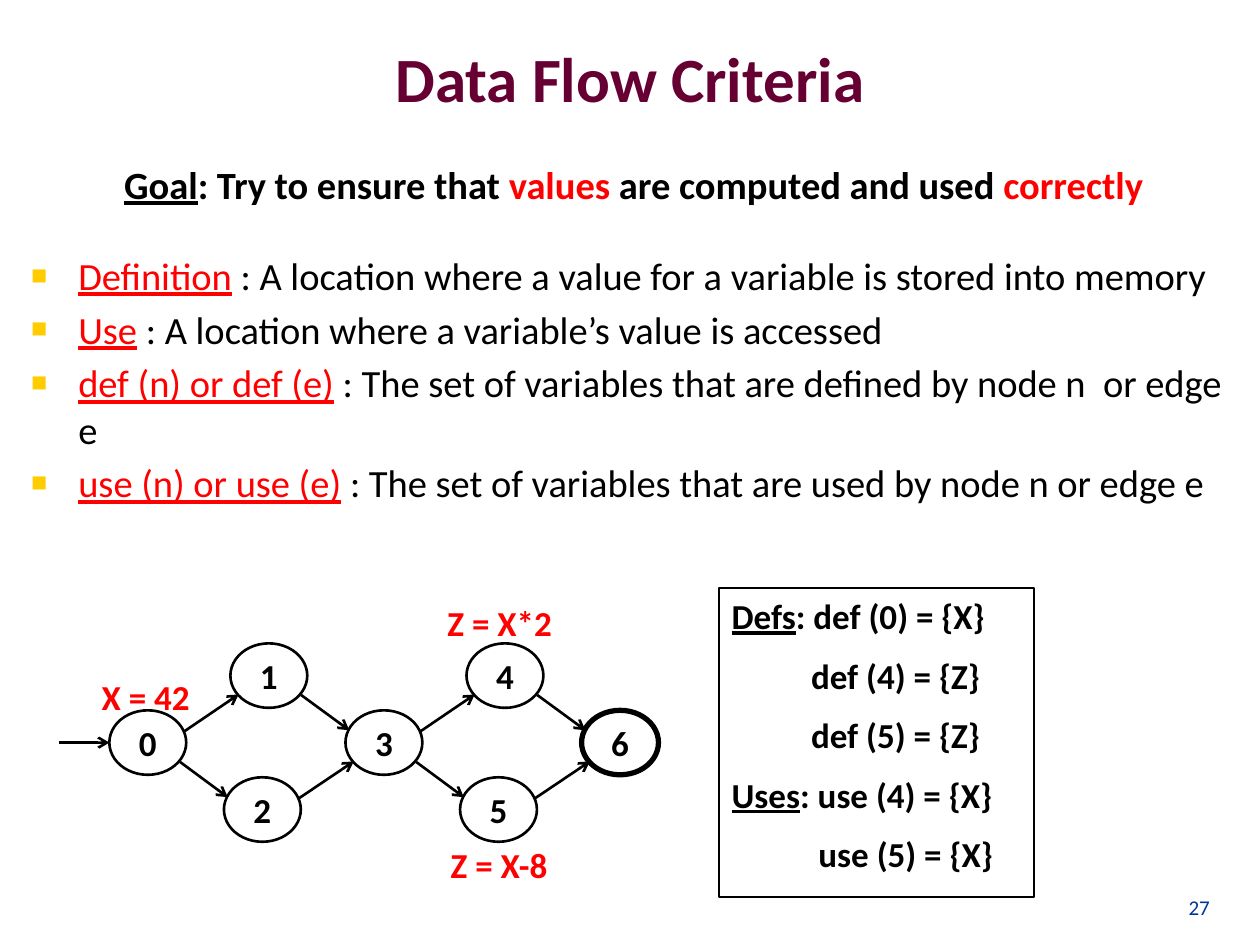
from lxml import etree
from pptx import Presentation
from pptx.dml.color import RGBColor
from pptx.enum.shapes import MSO_CONNECTOR, MSO_SHAPE
from pptx.enum.text import MSO_ANCHOR, PP_ALIGN
from pptx.oxml.ns import qn
from pptx.util import Cm, Pt

LEFT, CENTER, RIGHT = PP_ALIGN.LEFT, PP_ALIGN.CENTER, PP_ALIGN.RIGHT
TOP, MIDDLE, BOTTOM = MSO_ANCHOR.TOP, MSO_ANCHOR.MIDDLE, MSO_ANCHOR.BOTTOM
OVAL, RECT = MSO_SHAPE.OVAL, MSO_SHAPE.RECTANGLE
STRAIGHT = MSO_CONNECTOR.STRAIGHT

FONT = "Calibri"
BLACK, RED, MAROON, BLUE, GOLD = "000000", "FF0000", "660033", "003399", "FFCC00"

# Runs are (text, colour, underlined)
TITLE = [("Data Flow Criteria", MAROON, False)]
PAGE = [("27", BLUE, False)]
GOAL = [
    ("Goal", BLACK, True),
    (": Try to ensure that ", BLACK, False),
    ("values", RED, False),
    (" are computed and used ", BLACK, False),
    ("correctly", RED, False),
]
TERMS = [
    ("Definition", "A location where a value for a variable is stored into memory"),
    ("Use", "A location where a variable’s value is accessed"),
    ("def (n) or def (e)", "The set of variables that are defined by node n  or edge e"),
    ("use (n) or use (e)", "The set of variables that are used by node n or edge e"),
]
# (underlined heading, text, indent in cm)
SETS = [
    ("Defs", ": def (0) = {X}", 0),
    ("", "def (4) = {Z}", 1.6),
    ("", "def (5) = {Z}", 1.6),
    ("Uses", ": use (4) = {X}", 0),
    ("", "use (5) = {X}", 1.75),
]
# (text, left, top, width) in cm
STATEMENTS = [
    ("X = 42", 1.52, 13.49, 2.84),
    ("Z = X-8", 8.64, 16.87, 2.84),
    ("Z = X*2", 8.41, 12.01, 3.33),
]

# Flow graph: two diamonds side by side, in cm
NODE_W, NODE_H = 1.55, 1.3
START_X, MID_Y, DIAMOND_W, RISE = 2.98, 14.97, 4.76, 1.35
UPPER_DX, LOWER_DX = 2.44, 2.31
FINAL_NODE = 6
EDGES = [(0, 1), (0, 2), (1, 3), (2, 3), (3, 4), (3, 5), (4, 6), (5, 6)]
# Offsets of the edge ends from the node centres
UP_ENDS = (0.74, -0.23), (-0.61, 0.38)
DOWN_ENDS = (0.65, 0.39), (-0.7, -0.25)


def rgb(color):
    return RGBColor.from_string(color)


def setup_frame(shape, anchor=TOP):
    tf = shape.text_frame
    tf.word_wrap = True
    tf.vertical_anchor = anchor
    return tf


def add_runs(p, runs, size, bold=False, align=LEFT):
    p.alignment = align
    for text, color, underlined in runs:
        r = p.add_run()
        r.text = text
        r.font.name = FONT
        r.font.size = Pt(size)
        r.font.bold = bold
        r.font.underline = underlined
        r.font.color.rgb = rgb(color)


def add_text(s, box, runs, size, bold=False, align=CENTER, anchor=TOP):
    tf = setup_frame(s.shapes.add_textbox(*map(Cm, box)), anchor)
    add_runs(tf.paragraphs[0], runs, size, bold, align)


def paragraphs(tf, count, gap):
    """Yield count paragraphs with gap points between them."""
    for i in range(count):
        p = tf.add_paragraph() if i else tf.paragraphs[0]
        p.space_before = Pt(gap if i else 0)
        yield p


def add_bullet(p, indent):
    pPr = p._p.get_or_add_pPr()
    pPr.set("marL", str(Cm(indent)))
    pPr.set("indent", str(-Cm(indent)))
    color = etree.SubElement(pPr, qn("a:buClr"))
    etree.SubElement(color, qn("a:srgbClr"), val=GOLD)
    etree.SubElement(pPr, qn("a:buSzPct"), val="70000")
    etree.SubElement(pPr, qn("a:buFont"), typeface="Arial")
    etree.SubElement(pPr, qn("a:buChar"), char="■")


def add_outline(s, kind, box, width):
    sp = s.shapes.add_shape(kind, *map(Cm, box))
    sp.shadow.inherit = False
    sp.fill.background()
    sp.line.color.rgb = rgb(BLACK)
    sp.line.width = Pt(width)
    return sp


def add_arrow(s, start, end):
    line = s.shapes.add_connector(STRAIGHT, *map(Cm, start + end))
    line.line.color.rgb = rgb(BLACK)
    line.line.width = Pt(1.5)
    etree.SubElement(line.line._get_or_add_ln(), qn("a:tailEnd"), type="arrow")
    etree.SubElement(line._element.spPr, qn("a:effectLst"))


def node_center(n):
    diamond, place = divmod(n, 3)
    dx, dy = [(0, 0), (UPPER_DX, -RISE), (LOWER_DX, RISE)][place]
    return START_X + diamond * DIAMOND_W + dx, MID_Y + dy


def add_graph(s):
    for n in range(FINAL_NODE + 1):
        x, y = node_center(n)
        box = x - NODE_W / 2, y - NODE_H / 2, NODE_W, NODE_H
        sp = add_outline(s, OVAL, box, 3 if n == FINAL_NODE else 1.5)
        tf = setup_frame(sp, MIDDLE)
        tf.margin_left = tf.margin_right = tf.margin_top = tf.margin_bottom = 0
        add_runs(tf.paragraphs[0], [(str(n), BLACK, False)], 20, True, CENTER)
    add_arrow(s, (1.19, MID_Y), (START_X - NODE_W / 2, MID_Y))
    for a, b in EDGES:
        (ax, ay), (bx, by) = node_center(a), node_center(b)
        (sx, sy), (ex, ey) = UP_ENDS if by < ay else DOWN_ENDS
        add_arrow(s, (ax + sx, ay + sy), (bx + ex, by + ey))
    for text, x, y, w in STATEMENTS:
        add_text(s, (x, y, w, 1.1), [(text, RED, False)], 20, True)


def add_terms(s):
    tf = setup_frame(s.shapes.add_textbox(Cm(0.38), Cm(4.95), Cm(24.56), Cm(7.92)))
    for p, (term, meaning) in zip(paragraphs(tf, len(TERMS), 4.4), TERMS):
        add_bullet(p, 0.95)
        add_runs(p, [(term, RED, True), (" ", BLUE, False),
                     (": " + meaning, BLACK, False)], 22)


def add_sets(s):
    tf = setup_frame(add_outline(s, RECT, (14.5, 11.86, 6.35, 6.22), 1))
    for p, (heading, text, indent) in zip(paragraphs(tf, len(SETS), 10), SETS):
        p._p.get_or_add_pPr().set("marL", str(Cm(indent)))
        runs = [(heading, BLACK, True)] if heading else []
        add_runs(p, runs + [(text, BLACK, False)], 20, True)


def main():
    prs = Presentation()
    prs.slide_width, prs.slide_height = Cm(25.4), Cm(19.05)
    s = prs.slides.add_slide(prs.slide_layouts[6])
    add_text(s, (1.27, -0.03, 22.86, 3.18), TITLE, 36, True, anchor=MIDDLE)
    add_text(s, (0.43, 3.12, 24.69, 1.19), GOAL, 22, True)
    add_terms(s)
    add_graph(s)
    add_sets(s)
    add_text(s, (22.89, 17.35, 1.75, 1.32), PAGE, 12, align=RIGHT, anchor=BOTTOM)
    prs.save("out.pptx")


if __name__ == "__main__":
    main()
